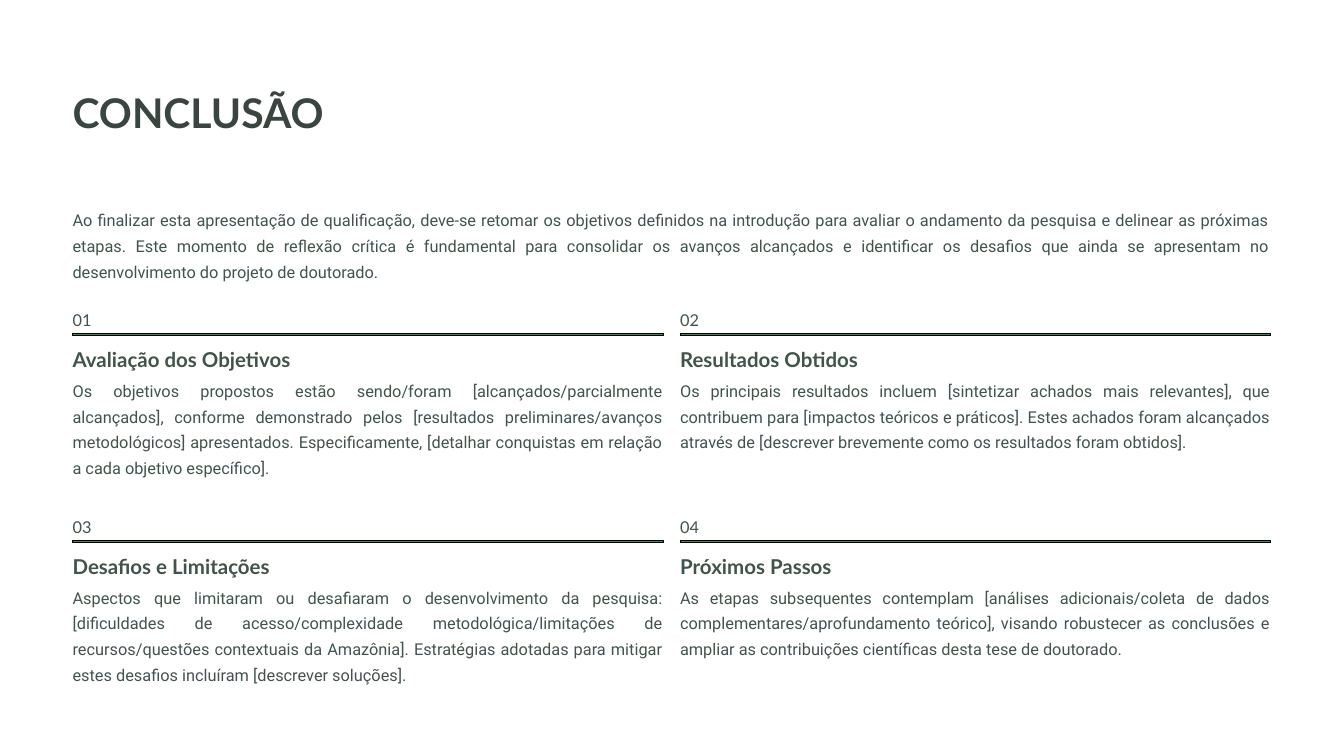
from dataclasses import dataclass

from pptx import Presentation
from pptx.dml.color import RGBColor
from pptx.enum.shapes import MSO_SHAPE
from pptx.enum.text import MSO_ANCHOR, MSO_AUTO_SIZE, PP_ALIGN
from pptx.util import Inches, Pt

LEFT, JUSTIFY = PP_ALIGN.LEFT, PP_ALIGN.JUSTIFY
TOP, NO_FIT = MSO_ANCHOR.TOP, MSO_AUTO_SIZE.NONE
RECT = MSO_SHAPE.RECTANGLE
TITLE_ONLY = 5


@dataclass(frozen=True)
class Theme:
    heading_font: str = "Lato"
    body_font: str = "Roboto"
    title_color: str = "3B4540"
    text_color: str = "405449"
    rule_fill: str = "438951"
    rule_line: str = "000000"
    title_size: float = 43.8
    heading_size: float = 21.9
    body_size: float = 17.5
    title_leading: float = 54.4
    heading_leading: float = 26.9
    body_leading: float = 27.5


@dataclass(frozen=True)
class Grid:
    """Two columns and two rows of topics, in inches."""
    left: float = 1.08
    top: float = 4.52
    col_width: float = 8.79
    gutter: float = 0.25
    row_pitch: float = 3.08
    cols: int = 2

    @property
    def width(self):
        return self.cols * self.col_width + (self.cols - 1) * self.gutter

    def cell(self, index):
        row, col = divmod(index, self.cols)
        return (self.left + col * (self.col_width + self.gutter),
                self.top + row * self.row_pitch)


def write(tf, text, *, font, size, color, leading, bold=False, align=LEFT):
    """Fill a text frame with one formatted paragraph."""
    tf.margin_left = tf.margin_right = tf.margin_top = tf.margin_bottom = 0
    tf.word_wrap = True
    tf.auto_size = NO_FIT
    tf.vertical_anchor = TOP
    p = tf.paragraphs[0]
    p.alignment = align
    p.line_spacing = Pt(leading)
    p.space_before = Pt(0)
    r = p.add_run()
    r.text = text
    r.font.name, r.font.size, r.font.bold = font, Pt(size), bold
    r.font.color.rgb = RGBColor.from_string(color)


class Deck:
    def __init__(self, theme, grid):
        self.theme, self.grid = theme, grid
        self.prs = Presentation()
        self.prs.slide_width, self.prs.slide_height = Inches(20), Inches(11.25)
        self.s = None

    def add_slide(self):
        self.s = self.prs.slides.add_slide(self.prs.slide_layouts[TITLE_ONLY])

    def title(self, text, y, height):
        t, sp = self.theme, self.s.shapes.title
        sp.left, sp.top = Inches(self.grid.left), Inches(y)
        sp.width, sp.height = Inches(self.grid.width), Inches(height)
        write(sp.text_frame, text, font=t.heading_font, size=t.title_size,
              color=t.title_color, leading=t.title_leading, bold=True)

    def text(self, text, x, y, width, height, **fmt):
        sp = self.s.shapes.add_textbox(Inches(x), Inches(y), Inches(width), Inches(height))
        write(sp.text_frame, text, color=self.theme.text_color, **fmt)

    def label(self, text, x, y):
        t = self.theme
        self.text(text, x, y, 0.5, 0.36, font=t.heading_font,
                  size=t.body_size, leading=t.body_leading)

    def heading(self, text, x, y):
        t = self.theme
        self.text(text, x, y, self.grid.col_width, 0.38, font=t.heading_font,
                  size=t.heading_size, leading=t.heading_leading, bold=True)

    def body(self, text, x, y, width, height):
        t = self.theme
        self.text(text, x, y, width, height, font=t.body_font,
                  size=t.body_size, leading=t.body_leading, align=JUSTIFY)

    def rule(self, x, y):
        sp = self.s.shapes.add_shape(RECT, Inches(x), Inches(y),
                                     Inches(self.grid.col_width), Inches(0.03))
        sp.shadow.inherit = False
        sp.fill.solid()
        sp.fill.fore_color.rgb = RGBColor.from_string(self.theme.rule_fill)
        sp.line.color.rgb = RGBColor.from_string(self.theme.rule_line)
        sp.line.width = Pt(1)

    def topic(self, index, heading, body):
        x, y = self.grid.cell(index)
        self.label(f"{index + 1:02d}", x, y)
        self.rule(x, y + 0.45)
        self.heading(heading, x, y + 0.63)
        self.body(body, x, y + 1.06, self.grid.col_width, 1.5)


INTRO = (
    "Ao finalizar esta apresentação de qualificação, deve-se retomar os objetivos "
    "definidos na introdução para avaliar o andamento da pesquisa e delinear as próximas "
    "etapas. Este momento de reflexão crítica é fundamental para consolidar os avanços "
    "alcançados e identificar os desafios que ainda se apresentam no desenvolvimento do "
    "projeto de doutorado."
)
TOPICS = [
    ("Avaliação dos Objetivos",
     "Os objetivos propostos estão sendo/foram [alcançados/parcialmente alcançados], "
     "conforme demonstrado pelos [resultados preliminares/avanços metodológicos] "
     "apresentados. Especificamente, [detalhar conquistas em relação a cada objetivo "
     "específico]."),
    ("Resultados Obtidos",
     "Os principais resultados incluem [sintetizar achados mais relevantes], que "
     "contribuem para [impactos teóricos e práticos]. Estes achados foram alcançados "
     "através de [descrever brevemente como os resultados foram obtidos]."),
    ("Desafios e Limitações",
     "Aspectos que limitaram ou desafiaram o desenvolvimento da pesquisa: [dificuldades "
     "de acesso/complexidade metodológica/limitações de recursos/questões contextuais da "
     "Amazônia]. Estratégias adotadas para mitigar estes desafios incluíram [descrever "
     "soluções]."),
    ("Próximos Passos",
     "As etapas subsequentes contemplam [análises adicionais/coleta de dados "
     "complementares/aprofundamento teórico], visando robustecer as conclusões e ampliar "
     "as contribuições científicas desta tese de doutorado."),
]


def main():
    deck = Deck(Theme(), Grid())
    deck.add_slide()

    # Title and introduction
    deck.title("CONCLUSÃO", 1.28, 0.78)
    deck.body(INTRO, deck.grid.left, 3.04, deck.grid.width, 1.13)

    # Numbered topics
    for i, (heading, body) in enumerate(TOPICS):
        deck.topic(i, heading, body)

    deck.prs.save("out.pptx")


if __name__ == "__main__":
    main()
